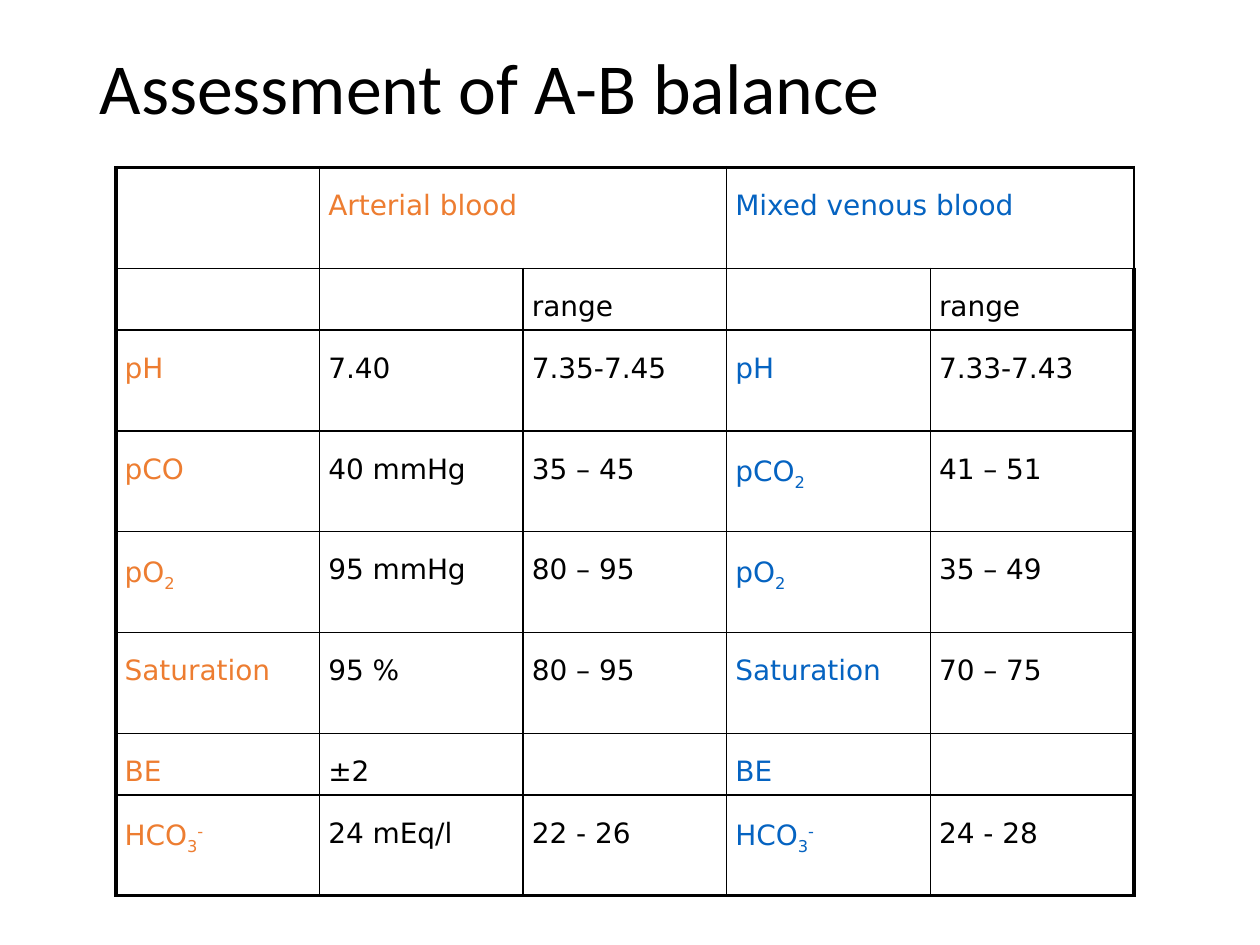
from lxml.etree import SubElement
from pptx import Presentation
from pptx.dml.color import RGBColor as RGB
from pptx.enum.text import MSO_ANCHOR as Anchor, MSO_AUTO_SIZE as AutoSize, PP_ALIGN as Align
from pptx.oxml.ns import qn
from pptx.util import Inches, Pt

BLACK = RGB(0x00, 0x00, 0x00)
WHITE = RGB(0xFF, 0xFF, 0xFF)
ORANGE = RGB(0xED, 0x7D, 0x31)
BLUE = RGB(0x05, 0x63, 0xC1)

TITLE_BOX = [Inches(n) for n in (0.69, 0.4, 8.62, 0.68)]
TABLE_BOX = [Inches(n) for n in (0.92, 1.33, 8.08, 5.78)]
TITLE_FRAME = {"vertical_anchor": Anchor.BOTTOM, "auto_size": AutoSize.NONE, "word_wrap": True}
TITLE_FONT = {"name": "Calibri", "size": Pt(41)}
CELL_FONT = {"name": "DejaVu Sans", "size": Pt(16)}
CELL_MARGINS = {
    "margin_left": Inches(0.07), "margin_right": Inches(0.07),
    "margin_top": Inches(0.05), "margin_bottom": Inches(0.05),
}
THIN, THICK = Pt(1), Pt(2.25)
TALL, SHORT = Inches(0.8), Inches(0.49)

SUBSCRIPT, SUPERSCRIPT = -25000, 30000
PCO2 = [("pCO", 0), ("2", SUBSCRIPT)]
PO2 = [("pO", 0), ("2", SUBSCRIPT)]
HCO3 = [("HCO", 0), ("3", SUBSCRIPT), ("-", SUPERSCRIPT)]

BLOOD_GASES = [
    ("", "Arterial blood", "", "Mixed venous blood", ""),
    ("", "", "range", "", "range"),
    ("pH", "7.40", "7.35-7.45", "pH", "7.33-7.43"),
    ("pCO", "40 mmHg", "35 – 45", PCO2, "41 – 51"),
    (PO2, "95 mmHg", "80 – 95", PO2, "35 – 49"),
    ("Saturation", "95 %", "80 – 95", "Saturation", "70 – 75"),
    ("BE", "±2", "", "BE", ""),
    (HCO3, "24 mEq/l", "22 - 26", HCO3, "24 - 28"),
]
SHORT_ROWS = (1, 6)
HEADING_COLORS = {1: ORANGE, 3: BLUE}
LABEL_COLORS = {0: ORANGE, 3: BLUE}


def apply_format(target, values):
    for name, value in values.items():
        setattr(target, name, value)


def place_title(title, box, wording):
    title.left, title.top, title.width, title.height = box
    apply_format(title.text_frame, TITLE_FRAME)
    paragraph = title.text_frame.paragraphs[0]
    apply_format(paragraph, {"alignment": Align.LEFT, "line_spacing": 0.9})
    run = paragraph.add_run()
    run.text = wording
    apply_format(run.font, TITLE_FONT)
    run.font.color.rgb = BLACK


def add_borders(cell, widths):
    properties = cell._tc.get_or_add_tcPr()
    for side, width in widths.items():
        line = SubElement(properties, qn(f"a:ln{side}"), w=str(int(width)))
        fill = SubElement(line, qn("a:solidFill"))
        SubElement(fill, qn("a:srgbClr"), val=str(BLACK))


def write_cell(cell, content, color):
    paragraph = cell.text_frame.paragraphs[0]
    paragraph.line_spacing = 1.5
    before = SubElement(paragraph._p.get_or_add_pPr(), qn("a:spcBef"))
    SubElement(before, qn("a:spcPct"), val="20000")
    pieces = [(content, 0)] if isinstance(content, str) else content
    for wording, baseline in pieces:
        run = paragraph.add_run()
        run.text = wording
        apply_format(run.font, CELL_FONT)
        run.font.color.rgb = color
        if baseline:
            run.font._element.set("baseline", str(baseline))


def place_blood_gas_table(slide, box, rows):
    row_count, column_count = len(rows), len(rows[0])
    table = slide.shapes.add_table(row_count, column_count, *box).table
    apply_format(table, {"first_row": False, "horz_banding": False})
    for column in table.columns:
        column.width = box[2] // column_count
    for r, row in enumerate(rows):
        table.rows[r].height = SHORT if r in SHORT_ROWS else TALL
        for c, content in enumerate(row):
            cell = table.cell(r, c)
            apply_format(cell, CELL_MARGINS)
            add_borders(cell, {
                "L": THICK if c == 0 else THIN,
                "R": THICK if c == column_count - 1 else THIN,
                "T": THICK if r == 0 else THIN,
                "B": THICK if r == row_count - 1 else THIN,
            })
            cell.fill.solid()
            cell.fill.fore_color.rgb = WHITE
            if content:
                colors = HEADING_COLORS if r == 0 else LABEL_COLORS
                write_cell(cell, content, colors.get(c, BLACK))
    for c in HEADING_COLORS:
        table.cell(0, c).merge(table.cell(0, c + 1))


def main():
    deck = Presentation()
    deck.slide_width, deck.slide_height = Inches(10), Inches(7.5)
    slide = deck.slides.add_slide(deck.slide_layouts[5])
    place_title(slide.shapes.title, TITLE_BOX, "Assessment of A-B balance")
    place_blood_gas_table(slide, TABLE_BOX, BLOOD_GASES)
    deck.save("out.pptx")


if __name__ == "__main__":
    main()
